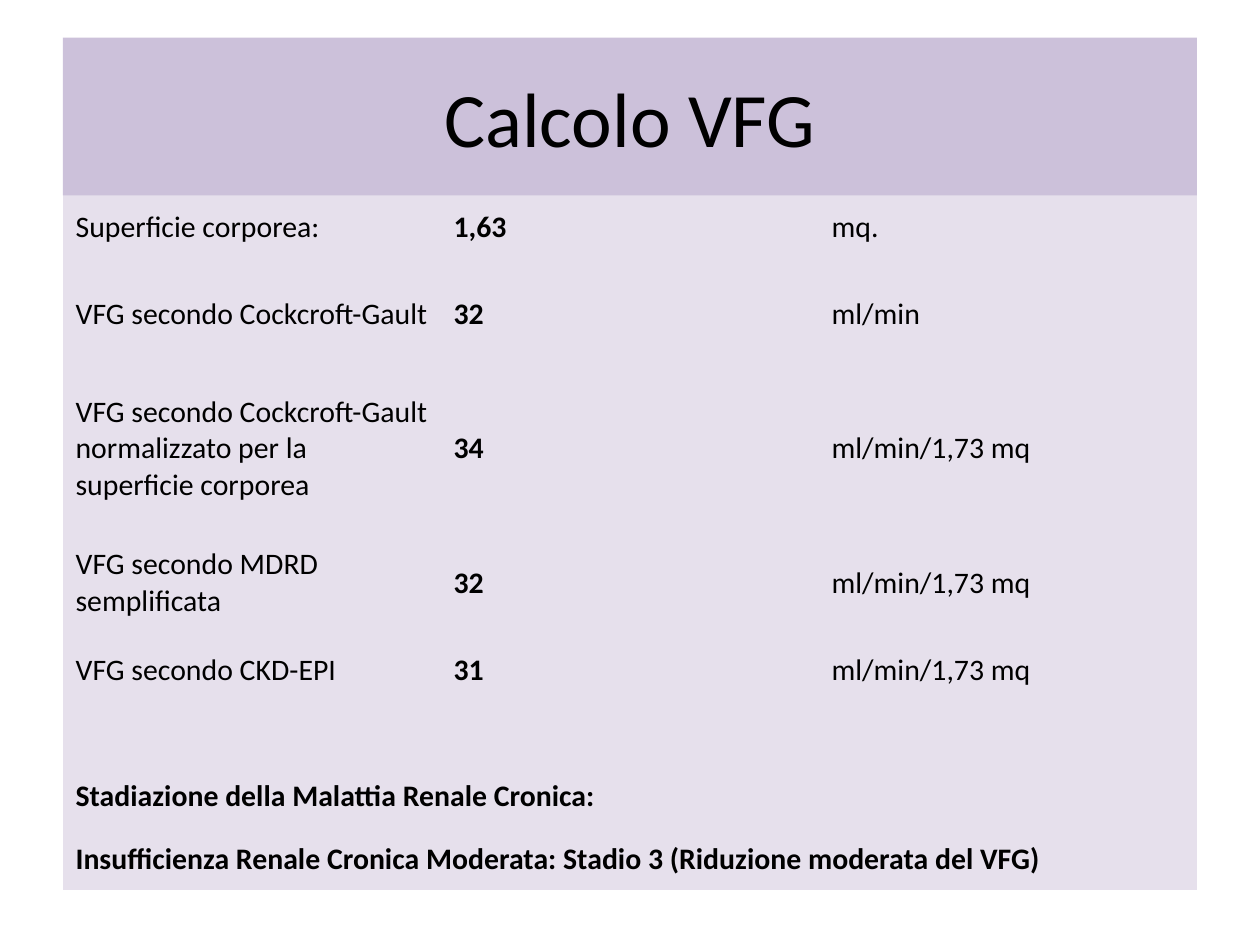
from pptx import Presentation
from pptx.dml.color import RGBColor
from pptx.enum.shapes import MSO_SHAPE as Shape
from pptx.enum.text import MSO_ANCHOR as Anchor, PP_ALIGN as Align
from pptx.util import Cm, Pt

BLACK = RGBColor(0x00, 0x00, 0x00)
LILAC = RGBColor(0xCC, 0xC1, 0xDA)
PALE_LILAC = RGBColor(0xE6, 0xE0, 0xEC)
NO_GRID_STYLE = "{2D5ABB26-0587-4C30-8999-92F81FD0307C}"

LEFT, TOP, WIDTH, TITLE_HEIGHT = 1.27, 0.76, 22.86, 3.18
ROW_HEIGHTS = [1.27, 2.24, 3.18, 2.24, 1.27, 1.27, 1.27, 1.27]

RESULTS = [
    ("Superficie corporea:", "1,63", "mq."),
    ("VFG secondo Cockcroft-Gault", "32", "ml/min"),
    ("VFG secondo Cockcroft-Gault normalizzato per la superficie corporea",
     "34", "ml/min/1,73 mq"),
    ("VFG secondo MDRD semplificata", "32", "ml/min/1,73 mq"),
    ("VFG secondo CKD-EPI", "31", "ml/min/1,73 mq"),
    ("", "", ""),
]
STAGING = [
    "Stadiazione della Malattia Renale Cronica:",
    "Insufficienza Renale Cronica Moderata: Stadio 3 (Riduzione moderata del VFG)",
]


class SlideBuilder:
    """Holds the text style and the current slide."""

    font_name = "Calibri"
    title_size = 44
    body_size = 17

    def __init__(self, slide):
        self.slide = slide

    def set_text(self, frame, text, size, bold=False):
        frame.text = text
        for run in frame.paragraphs[0].runs:
            run.font.name = self.font_name
            run.font.size = Pt(size)
            run.font.bold = bold
            run.font.color.rgb = BLACK

    def title(self, text, left, top, width, height):
        banner = self.slide.shapes.add_shape(
            Shape.RECTANGLE, Cm(left), Cm(top), Cm(width), Cm(height))
        banner.shadow.inherit = False
        banner.fill.solid()
        banner.fill.fore_color.rgb = LILAC
        banner.line.fill.background()
        frame = banner.text_frame
        frame.word_wrap = True
        frame.vertical_anchor = Anchor.MIDDLE
        self.set_text(frame, text, self.title_size)
        frame.paragraphs[0].alignment = Align.CENTER

    def table(self, results, staging, left, top, width, heights):
        columns = len(results[0])
        frame = self.slide.shapes.add_table(
            len(heights), columns, Cm(left), Cm(top), Cm(width), Cm(sum(heights)))
        table = frame.table
        table.first_row = table.horz_banding = False
        table._tbl.tblPr[0].text = NO_GRID_STYLE
        for column in table.columns:
            column.width = Cm(width / columns)
        for row, height in zip(table.rows, heights):
            row.height = Cm(height)
        for cell in table.iter_cells():
            cell.fill.solid()
            cell.fill.fore_color.rgb = PALE_LILAC
            cell.vertical_anchor = Anchor.MIDDLE

        # Measure, value in bold, unit
        for r, result in enumerate(results):
            for c, text in enumerate(result):
                self.set_text(table.cell(r, c).text_frame, text, self.body_size, bold=c == 1)

        # Staging lines across the full width
        for r, text in enumerate(staging, start=len(results)):
            line = table.cell(r, 0)
            line.merge(table.cell(r, columns - 1))
            self.set_text(line.text_frame, text, self.body_size, bold=True)


def main():
    deck = Presentation()
    deck.slide_width, deck.slide_height = Cm(25.4), Cm(19.05)
    builder = SlideBuilder(deck.slides.add_slide(deck.slide_layouts[6]))

    # Results table
    builder.table(RESULTS, STAGING, LEFT, TOP + TITLE_HEIGHT, WIDTH, ROW_HEIGHTS)

    # Title banner
    builder.title("Calcolo VFG", LEFT, TOP, WIDTH, TITLE_HEIGHT)

    deck.save("out.pptx")


if __name__ == "__main__":
    main()
